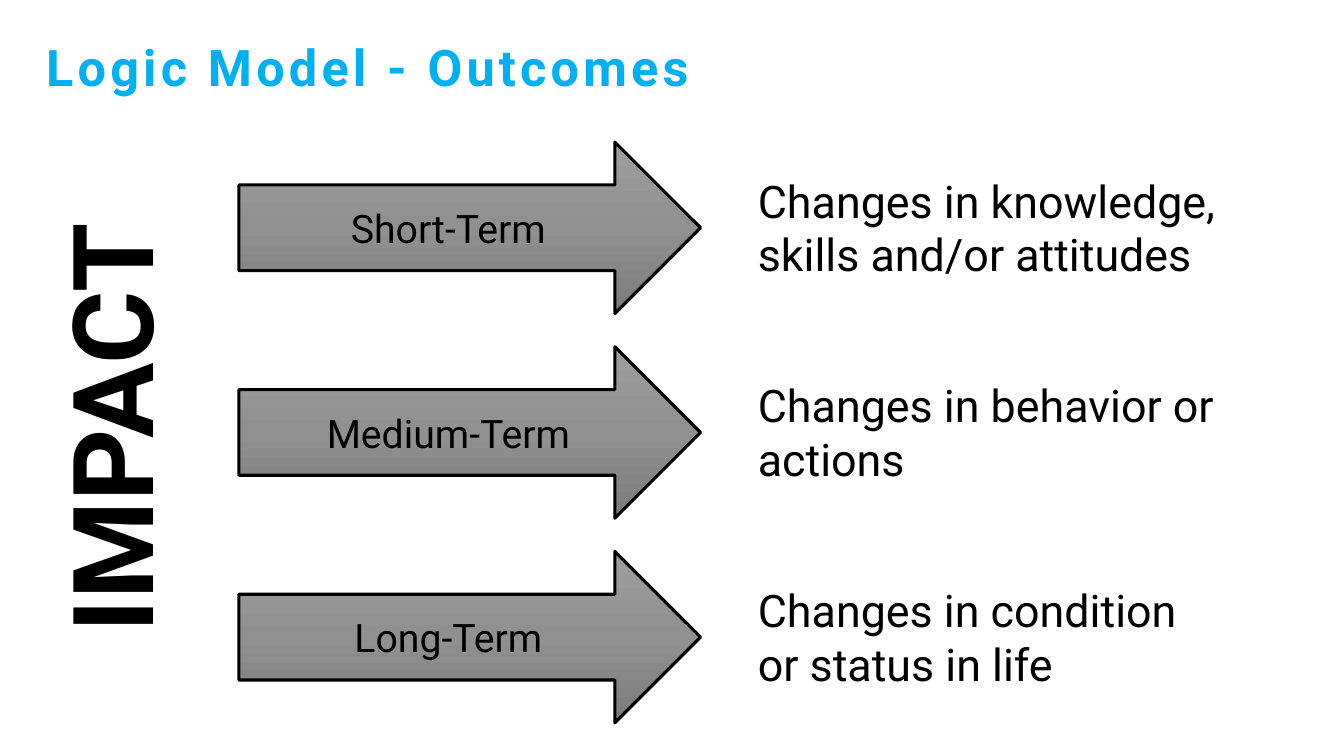
from copy import deepcopy
from dataclasses import dataclass

from pptx import Presentation
from pptx.dml.color import RGBColor
from pptx.enum.shapes import MSO_SHAPE
from pptx.enum.text import MSO_ANCHOR, MSO_AUTO_SIZE, PP_ALIGN
from pptx.oxml.ns import qn
from pptx.util import Inches, Pt

SLIDE_WIDTH, SLIDE_HEIGHT = Inches(13.33), Inches(7.5)


@dataclass(frozen=True)
class Theme:
    """Fonts, colours and type sizes of the slide."""
    font: str = "Roboto"
    accent: str = "00B0F0"
    ink: str = "000000"
    arrow_shades: tuple = ("9D9D9D", "909090", "7C7C7C")
    outline: float = 2.25
    title: int = 36
    impact: int = 80
    term: int = 28
    change: int = 32


THEME = Theme()

LEFT_MARGIN = 2.7
TERM_LEFT, TERM_WIDTH = 17.78, 34.35
CHANGE_LEFT, CHANGE_WIDTH = 55.65, 36.23
FIRST_ROW, ROW_STEP = 18.8, 27.07
TERM_HEIGHT, CHANGE_HEIGHT = 22.67, 15.73

OUTCOMES = (
    ("Short-Term", "Changes in knowledge, skills and/or attitudes"),
    ("Medium-Term", "Changes in behavior or actions"),
    ("Long-Term", "Changes in condition or status in life"),
)


def area(left, top, width, height):
    """Turn percentages of the slide into a position and size."""
    return (
        int(SLIDE_WIDTH * left / 100),
        int(SLIDE_HEIGHT * top / 100),
        int(SLIDE_WIDTH * width / 100),
        int(SLIDE_HEIGHT * height / 100),
    )


def write(frame, wording, size, color=THEME.ink, bold=False, align=PP_ALIGN.LEFT):
    """Add one styled run to the first paragraph and return the run."""
    frame.word_wrap = True
    paragraph = frame.paragraphs[0]
    paragraph.alignment = align
    run = paragraph.add_run()
    run.text = wording
    run.font.name = THEME.font
    run.font.size = Pt(size)
    run.font.bold = bold
    run.font.color.rgb = RGBColor.from_string(color)
    return run


def add_title(slide, wording):
    """Add the letter-spaced heading."""
    frame = slide.shapes.add_textbox(*area(LEFT_MARGIN, 5.07, 85.95, 11.07)).text_frame
    heading = write(frame, wording, THEME.title, THEME.accent, bold=True)
    heading._r.get_or_add_rPr().set("spc", "300")
    frame.paragraphs[0].line_spacing = 0.9


def add_impact(slide, wording):
    """Add the large word that reads upward beside the arrows."""
    frame = slide.shapes.add_textbox(*area(LEFT_MARGIN, FIRST_ROW, 11.63, 75.6)).text_frame
    write(frame, wording, THEME.impact, bold=True, align=PP_ALIGN.CENTER)
    frame.auto_size = MSO_AUTO_SIZE.SHAPE_TO_FIT_TEXT
    frame._txBody.bodyPr.set("vert", "vert270")


def shade(arrow):
    """Fill an arrow with the theme's shades from top to bottom."""
    arrow.fill.gradient()
    arrow.fill.gradient_angle = 270
    stop_list = arrow._element.spPr.find(qn("a:gradFill")).find(qn("a:gsLst"))
    stop_list.insert(1, deepcopy(stop_list[0]))
    last = len(THEME.arrow_shades) - 1
    for index, stop in enumerate(arrow.fill.gradient_stops):
        stop.position = index / last
        stop.color.rgb = RGBColor.from_string(THEME.arrow_shades[index])


def add_term(slide, top, wording):
    """Add the arrow that names a time frame."""
    arrow = slide.shapes.add_shape(
        MSO_SHAPE.RIGHT_ARROW, *area(TERM_LEFT, top, TERM_WIDTH, TERM_HEIGHT))
    arrow.shadow.inherit = False
    shade(arrow)
    arrow.line.color.rgb = RGBColor.from_string(THEME.ink)
    arrow.line.width = Pt(THEME.outline)
    arrow.text_frame.vertical_anchor = MSO_ANCHOR.MIDDLE
    write(arrow.text_frame, wording, THEME.term, align=PP_ALIGN.CENTER)


def add_change(slide, row_top, wording):
    """Add the change a time frame brings, centred on its arrow."""
    top = row_top + (TERM_HEIGHT - CHANGE_HEIGHT) / 2
    frame = slide.shapes.add_textbox(
        *area(CHANGE_LEFT, top, CHANGE_WIDTH, CHANGE_HEIGHT)).text_frame
    write(frame, wording, THEME.change)
    frame.auto_size = MSO_AUTO_SIZE.SHAPE_TO_FIT_TEXT


def main():
    """Build and save the outcomes slide."""
    deck = Presentation()
    deck.slide_width, deck.slide_height = SLIDE_WIDTH, SLIDE_HEIGHT
    slide = deck.slides.add_slide(deck.slide_layouts[6])
    add_title(slide, "Logic Model - Outcomes")
    add_impact(slide, "IMPACT")
    for row, (term, change) in enumerate(OUTCOMES):
        top = FIRST_ROW + row * ROW_STEP
        add_term(slide, top, term)
        add_change(slide, top, change)
    deck.save("out.pptx")


if __name__ == "__main__":
    main()
